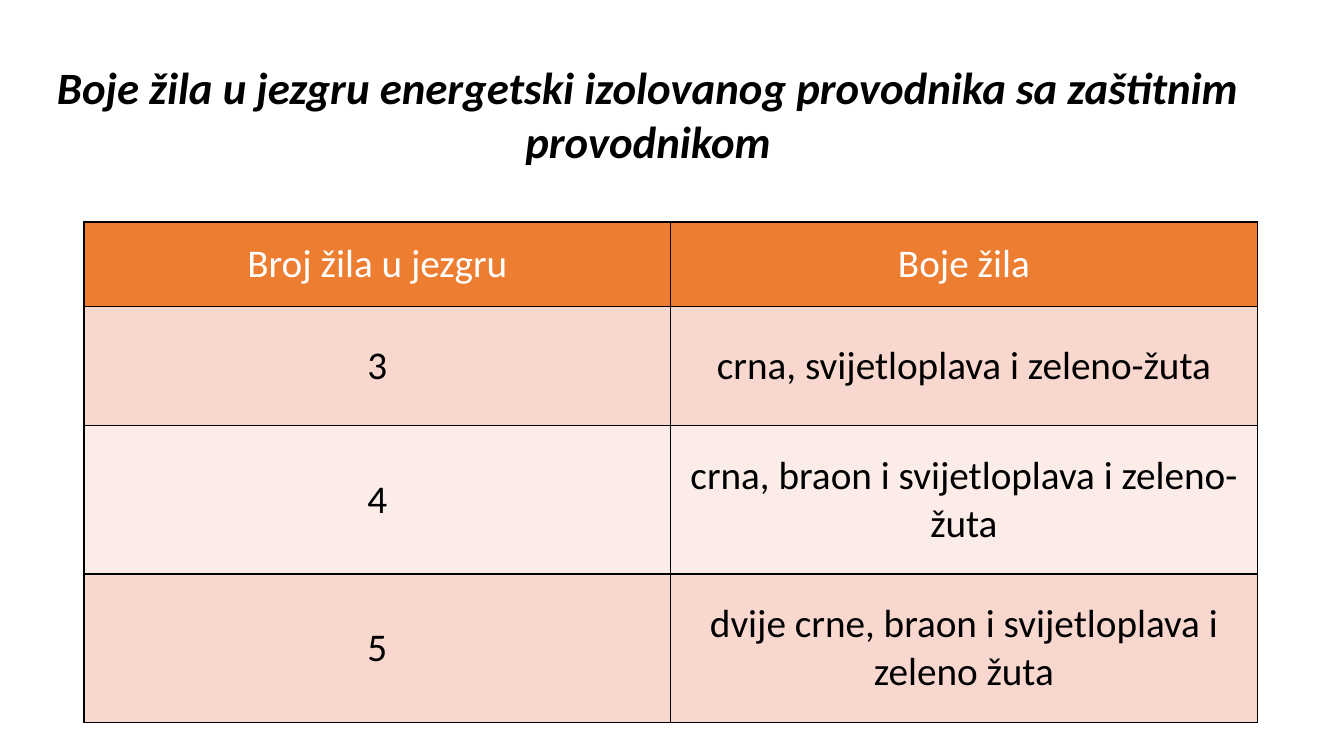
from lxml import etree
from pptx import Presentation
from pptx.dml.color import RGBColor
from pptx.enum import text
from pptx.oxml import ns
from pptx.util import Pt

COLORS = {
    "black": "000000",
    "white": "FFFFFF",
    "header": "ED7D31",
    "odd_row": "F8D7CE",
    "even_row": "FCECE8",
}
FONT = "Calibri"

TITLE = "Boje žila u jezgru energetski izolovanog provodnika sa zaštitnim provodnikom"
CORE_ROWS = [
    ("Broj žila u jezgru", "Boje žila"),
    ("3", "crna, svijetloplava i zeleno-žuta"),
    ("4", "crna, braon i svijetloplava i zeleno-žuta"),
    ("5", "dvije crne, braon i svijetloplava i zeleno žuta"),
]
ROW_HEIGHTS = [60.5, 85, 106, 106]
COLUMN_WIDTH = 419


def rgb(name):
    return RGBColor.from_string(COLORS[name])


def write(frame, wording, size=28, color="black", bold=False, italic=False):
    """Put one centred, formatted paragraph into a text frame."""
    paragraph = frame.paragraphs[0]
    paragraph.alignment = text.PP_ALIGN.CENTER
    paragraph.line_spacing = 1.0
    run = paragraph.add_run()
    run.text = wording
    font = run.font
    font.name, font.size = FONT, Pt(size)
    font.bold, font.italic = bold, italic
    font.color.rgb = rgb(color)


def add_borders(cell, color="black", width=1):
    properties = cell._tc.get_or_add_tcPr()
    # Border lines precede the fill in the cell properties
    for position, side in enumerate(("lnL", "lnR", "lnT", "lnB")):
        line = etree.Element(ns.qn(f"a:{side}"), w=str(Pt(width)))
        fill = etree.SubElement(line, ns.qn("a:solidFill"))
        etree.SubElement(fill, ns.qn("a:srgbClr"), val=COLORS[color])
        properties.insert(position, line)


def add_title(slide):
    title = slide.shapes.title
    title.left, title.top = Pt(0), Pt(39)
    title.width, title.height = Pt(926), Pt(85)
    frame = title.text_frame
    frame.word_wrap = True
    frame.auto_size = text.MSO_AUTO_SIZE.NONE
    frame.vertical_anchor = text.MSO_ANCHOR.TOP
    write(frame, TITLE, size=32, bold=True, italic=True)


def add_core_table(slide):
    columns = len(CORE_ROWS[0])
    table = slide.shapes.add_table(
        len(CORE_ROWS), columns, Pt(60), Pt(158.5),
        Pt(columns * COLUMN_WIDTH), Pt(sum(ROW_HEIGHTS))).table
    for column in table.columns:
        column.width = Pt(COLUMN_WIDTH)
    for r, (row, height) in enumerate(zip(CORE_ROWS, ROW_HEIGHTS)):
        table.rows[r].height = Pt(height)
        band = "header" if r == 0 else "odd_row" if r % 2 else "even_row"
        for c, wording in enumerate(row):
            cell = table.cell(r, c)
            cell.vertical_anchor = text.MSO_ANCHOR.MIDDLE
            cell.fill.solid()
            cell.fill.fore_color.rgb = rgb(band)
            add_borders(cell)
            write(cell.text_frame, wording, color="black" if r else "white")


def main():
    deck = Presentation()
    deck.slide_width, deck.slide_height = Pt(960), Pt(540)
    slide = deck.slides.add_slide(deck.slide_layouts[5])  # title only
    add_title(slide)
    add_core_table(slide)
    deck.save("out.pptx")


if __name__ == "__main__":
    main()
